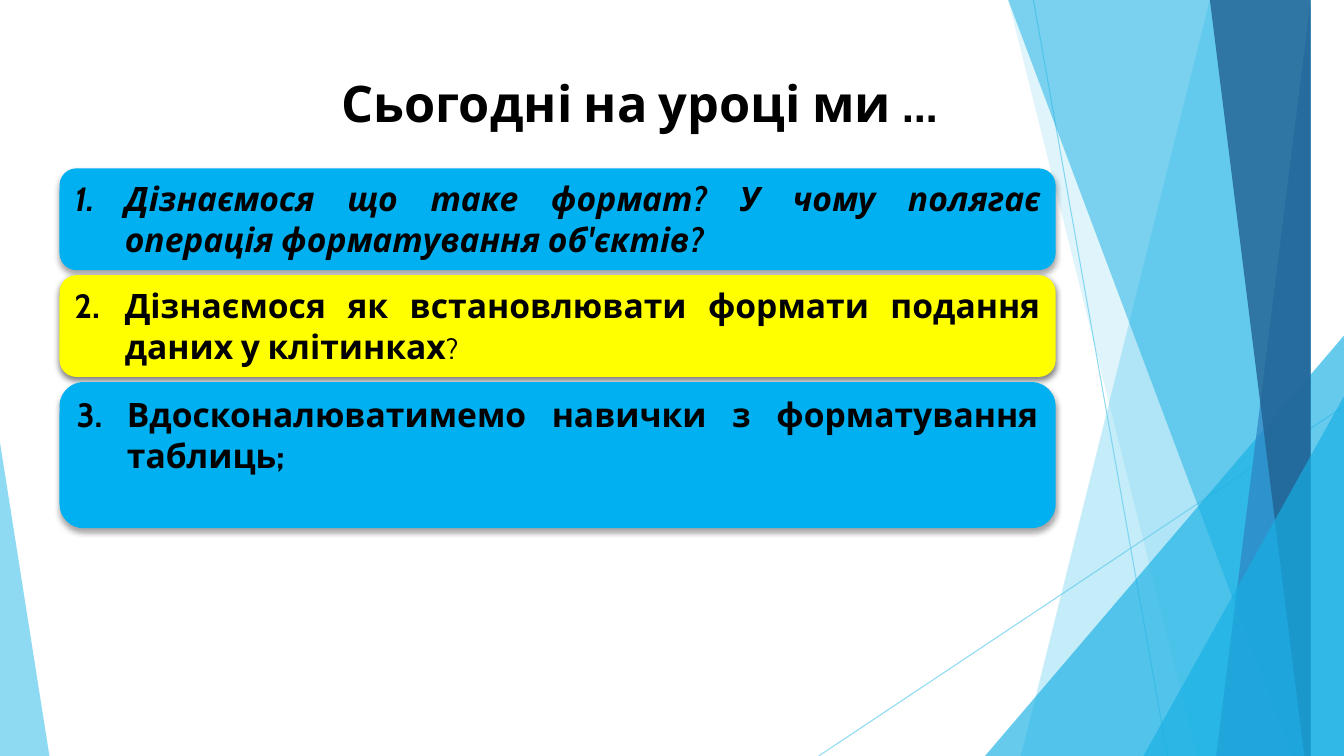
import lxml.etree
import pptx
import pptx.util
import pptx.dml.color
import pptx.enum.shapes
import pptx.enum.text
import pptx.oxml.ns

Inches = pptx.util.Inches
Pt = pptx.util.Pt
RGBColor = pptx.dml.color.RGBColor
MSO_SHAPE = pptx.enum.shapes.MSO_SHAPE
PP_ALIGN = pptx.enum.text.PP_ALIGN
qn = pptx.oxml.ns.qn

WIDTH, HEIGHT = 13.33, 7.5
FONT = "Cabin"
BLACK = RGBColor(0x00, 0x00, 0x00)
CARD_BLUE = RGBColor(0x00, 0xB0, 0xF0)
CARD_YELLOW = RGBColor(0xFF, 0xFF, 0x00)
SKY = RGBColor(0x5F, 0xCB, 0xEF)
CYAN = RGBColor(0x17, 0xB0, 0xE4)
STEEL = RGBColor(0x2E, 0x83, 0xC3)
NAVY = RGBColor(0x22, 0x62, 0x92)

# Facet bands reach the right edge: top x, bottom x, colour, opacity
BACK_BANDS = [(12.28, 10.04, SKY, 36), (10.5, 11.83, SKY, 20)]
FRONT_BANDS = [(10.21, 12.91, CYAN, 50), (13.03, 11.92, STEEL, 70),
               (11.96, 13.18, NAVY, 80)]
# Facet lines: start, end
RAYS = [((10.25, 0), (11.58, HEIGHT)), ((WIDTH, 4.03), (8.12, HEIGHT))]

# Cards: height, fill, shadow opacity, shadow distance, runs
CARDS = [
    (1.01, CARD_BLUE, 35, 3,
     [("Дізнаємося що таке формат? У чому полягає операція форматування об'єктів?",
       {"italic": True})]),
    (1.01, CARD_YELLOW, 50, 2,
     [("Дізнаємося як встановлювати формати подання даних у клітинках", {}),
      ("?", {"size": 20, "bold": False})]),
    (1.45, CARD_BLUE, 35, 3,
     [("Вдосконалюватимемо навички з форматування таблиць;", {})]),
]


def add_xml(parent, tag, **attributes):
    """Append a drawing element with the given attributes."""
    element = lxml.etree.SubElement(parent, qn(tag))
    for name, value in attributes.items():
        element.set(name, str(value))
    return element


def add_text(paragraph, text, size=24, bold=True, italic=False, color=BLACK):
    run = paragraph.add_run()
    run.text = text
    font = run.font
    font.name, font.size = FONT, Pt(size)
    font.bold, font.italic = bold, italic
    font.color.rgb = color


def set_opacity(fill_parent, percent):
    color = next(fill_parent.iter(qn("a:srgbClr")))
    add_xml(color, "a:alpha", val=percent * 1000)


def paint(shape, color, opacity=100):
    shape.shadow.inherit = False
    shape.fill.solid()
    shape.fill.fore_color.rgb = color
    shape.line.fill.background()
    if opacity < 100:
        set_opacity(shape._element.spPr, opacity)


def add_ray(slide, start, end):
    ray = slide.shapes.add_connector(
        pptx.enum.shapes.MSO_CONNECTOR.STRAIGHT,
        *(Inches(value) for value in start + end))
    ray.line.color.rgb = SKY
    ray.line.width = Pt(0.75)
    set_opacity(ray._element.spPr, 70)
    add_xml(ray._element.spPr, "a:effectLst")


def add_band(slide, top_x, bottom_x, color, opacity):
    builder = slide.shapes.build_freeform(top_x, 0, scale=Inches(1))
    builder.add_line_segments(
        [(WIDTH, 0), (WIDTH, HEIGHT), (bottom_x, HEIGHT)], close=True)
    paint(builder.convert_to_shape(), color, opacity)


def add_corner(slide, left, top, width, apex, color, opacity):
    """Triangle standing on the bottom edge of the slide."""
    corner = slide.shapes.add_shape(
        MSO_SHAPE.ISOSCELES_TRIANGLE, Inches(left), Inches(top),
        Inches(width), Inches(HEIGHT - top))
    corner.adjustments[0] = apex
    paint(corner, color, opacity)


def add_facets(slide):
    for start, end in RAYS:
        add_ray(slide, start, end)
    for band in BACK_BANDS:
        add_band(slide, *band)
    add_corner(slide, 9.77, 3.33, WIDTH - 9.77, 1, CYAN, 66)
    for band in FRONT_BANDS:
        add_band(slide, *band)
    add_corner(slide, 11.34, 3.93, WIDTH - 11.34, 1, CYAN, 66)
    add_corner(slide, 0, 4.39, 0.49, 0, SKY, 70)


def add_title(slide, left, top, width, height):
    title = slide.shapes.title
    title.left, title.top = Inches(left), Inches(top)
    title.width, title.height = Inches(width), Inches(height)
    frame = title.text_frame
    frame.word_wrap = True
    frame.auto_size = pptx.enum.text.MSO_AUTO_SIZE.NONE
    frame.vertical_anchor = pptx.enum.text.MSO_ANCHOR.TOP
    paragraph = frame.paragraphs[0]
    paragraph.alignment = PP_ALIGN.CENTER
    add_text(paragraph, "Сьогодні на уроці ми …", size=36)
    # Bring the title in front of the facets
    slide.shapes._spTree.append(title._element)


def add_shadow(shape, opacity, distance):
    effects = shape._element.spPr.find(qn("a:effectLst"))
    shadow = add_xml(effects, "a:outerShdw", blurRad=Pt(4), dist=Pt(distance),
                     dir=90 * 60000, algn="t", rotWithShape=0)
    color = add_xml(shadow, "a:srgbClr", val=BLACK)
    add_xml(color, "a:alpha", val=opacity * 1000)


def add_card(slide, number, left, top, width, height, fill, opacity, distance, runs):
    card = slide.shapes.add_shape(
        MSO_SHAPE.ROUNDED_RECTANGLE, Inches(left), Inches(top),
        Inches(width), Inches(height))
    paint(card, fill)
    add_shadow(card, opacity, distance)
    frame = card.text_frame
    frame.word_wrap = True
    frame.vertical_anchor = pptx.enum.text.MSO_ANCHOR.TOP
    paragraph = frame.paragraphs[0]
    paragraph.alignment = PP_ALIGN.JUSTIFY
    for text, options in runs:
        add_text(paragraph, text, **options)
    # Hanging number
    properties = paragraph._p.get_or_add_pPr()
    properties.set("marL", str(Inches(0.5)))
    properties.set("indent", str(-Inches(0.5)))
    add_xml(properties, "a:buFont", typeface=FONT)
    add_xml(properties, "a:buAutoNum", type="arabicPeriod", startAt=number)


def add_cards(slide, left, top, width, gap):
    for number, (height, *details) in enumerate(CARDS, start=1):
        add_card(slide, number, left, top, width, height, *details)
        top += height + gap


def main():
    presentation = pptx.Presentation()
    presentation.slide_width = Inches(WIDTH)
    presentation.slide_height = Inches(HEIGHT)
    slide = presentation.slides.add_slide(presentation.slide_layouts[5])
    add_facets(slide)
    add_title(slide, 0.74, 0.67, 11.21, 0.96)
    add_cards(slide, 0.59, 1.67, 9.88, 0.05)
    presentation.save("out.pptx")


if __name__ == "__main__":
    main()
